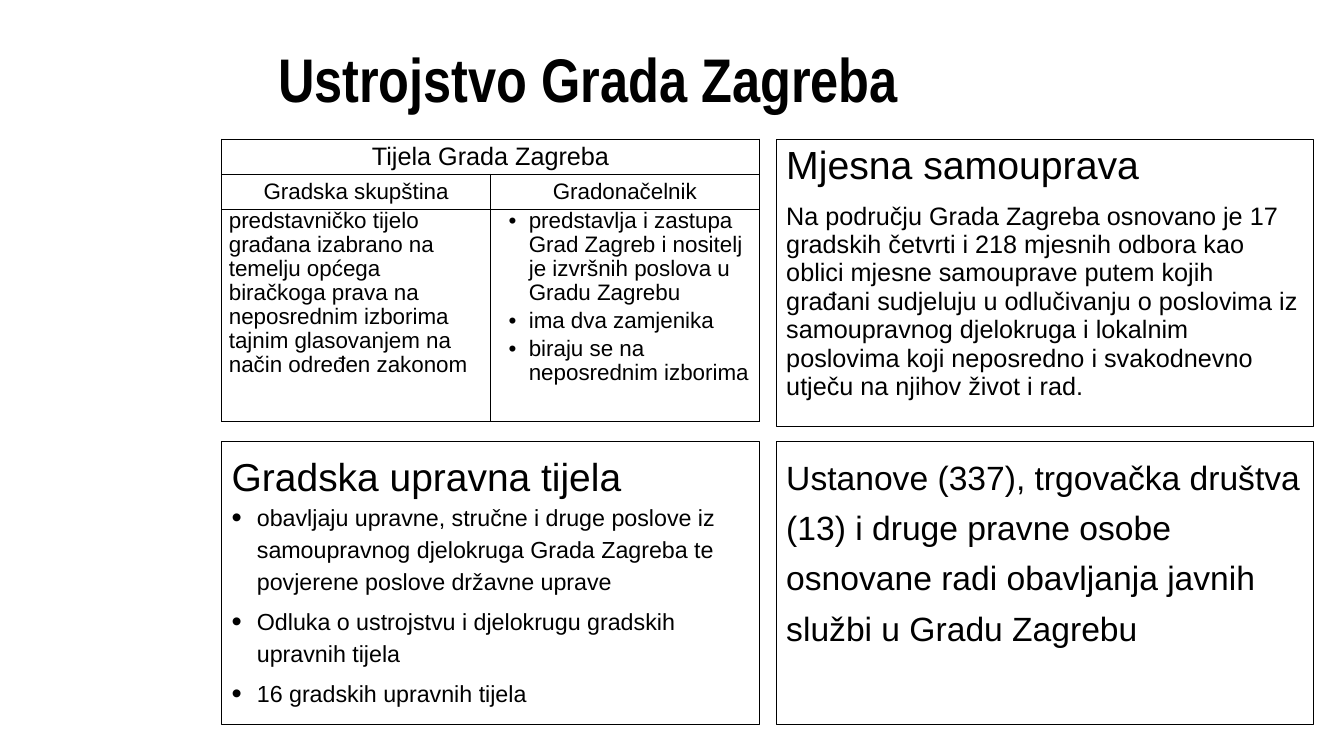
from pptx import Presentation
from pptx.dml.color import RGBColor
from pptx.enum.shapes import MSO_SHAPE
from pptx.enum.text import MSO_ANCHOR, PP_ALIGN
from pptx.oxml import parse_xml
from pptx.oxml.ns import nsdecls
from pptx.util import Inches, Pt

TITLE = "Ustrojstvo Grada Zagreba"
BODIES = "Tijela Grada Zagreba"
ASSEMBLY = ("Gradska skupština", [
    "predstavničko tijelo građana izabrano na temelju općega biračkoga prava na "
    "neposrednim izborima tajnim glasovanjem na način određen zakonom"])
MAYOR = ("Gradonačelnik", [
    "predstavlja i zastupa Grad Zagreb i nositelj je izvršnih poslova u Gradu Zagrebu",
    "ima dva zamjenika",
    "biraju se na neposrednim izborima"])
LOCAL = ("Mjesna samouprava", [
    "Na području Grada Zagreba osnovano je 17 gradskih četvrti i 218 mjesnih odbora kao "
    "oblici mjesne samouprave putem kojih građani sudjeluju u odlučivanju o poslovima iz "
    "samoupravnog djelokruga i lokalnim poslovima koji neposredno i svakodnevno utječu na "
    "njihov život i rad."])
OFFICES = ("Gradska upravna tijela", [
    "obavljaju upravne, stručne i druge poslove iz samoupravnog djelokruga Grada Zagreba te "
    "povjerene poslove državne uprave",
    "Odluka o ustrojstvu i djelokrugu gradskih upravnih tijela",
    "16 gradskih upravnih tijela"])
INSTITUTIONS = ("Ustanove (337), trgovačka društva (13) i druge pravne osobe osnovane radi "
                "obavljanja javnih službi u Gradu Zagrebu")

THEME = {
    "ink": RGBColor(0, 0, 0), "font": "Arial", "title_font": "Arial Narrow",
    "title": 44, "head": 28, "office_head": 27.8, "lead": 24, "body": 18,
    "cell": 16, "office": 16.6, "frame": 0.75, "border": 1,
}

LEFT, TOP, PANEL_W, GAP = 2.2, 1.38, 5.33, 0.17
RIGHT = LEFT + PANEL_W + GAP
LOWER, UPPER_H, LOWER_H = 4.38, 2.85, 2.81
ROWS = [0.35, 0.35, 2.1]


def set_bullet(p, margin, hang, percent):
    pPr = p._p.get_or_add_pPr()
    pPr.set("marL", str(Inches(margin)))
    pPr.set("indent", str(-Inches(hang)))
    for xml in (f'<a:buSzPct {nsdecls("a")} val="{percent * 1000}"/>',
                f'<a:buFont {nsdecls("a")} typeface="Arial"/>',
                f'<a:buChar {nsdecls("a")} char="•"/>'):
        pPr.append(parse_xml(xml))


def write(tf, lines, size, bullet=None, font=None, bold=False, start=False, **form):
    for i, text in enumerate(lines):
        p = tf.paragraphs[0] if start and i == 0 else tf.add_paragraph()
        if bullet:
            set_bullet(p, *bullet)
        for name, value in form.items():
            setattr(p, name, value)
        r = p.add_run()
        r.text = text
        style = {"name": font or THEME["font"], "size": Pt(size), "bold": bold}
        for name, value in style.items():
            setattr(r.font, name, value)
        r.font.color.rgb = THEME["ink"]


def add_panel(s, x, y, h):
    sp = s.shapes.add_shape(MSO_SHAPE.RECTANGLE, Inches(x), Inches(y),
                            Inches(PANEL_W), Inches(h))
    sp.shadow.inherit = False
    sp.fill.background()
    sp.line.color.rgb = THEME["ink"]
    sp.line.width = Pt(THEME["frame"])
    tf = sp.text_frame
    tf.word_wrap = True
    tf.vertical_anchor = MSO_ANCHOR.TOP
    return tf


def style_cell(cell, left=0.07, right=0.07, anchor=MSO_ANCHOR.MIDDLE):
    form = {"margin_left": Inches(left), "margin_right": Inches(right),
            "margin_top": 0, "margin_bottom": 0, "vertical_anchor": anchor}
    for name, value in form.items():
        setattr(cell, name, value)
    cell.fill.background()
    tcPr = cell._tc.get_or_add_tcPr()
    for i, side in enumerate("LRTB"):
        tcPr.insert(i, parse_xml(
            f'<a:ln{side} {nsdecls("a")} w="{Pt(THEME["border"])}"><a:solidFill>'
            f'<a:srgbClr val="{THEME["ink"]}"/></a:solidFill></a:ln{side}>'))


def add_bodies_table(s):
    table = s.shapes.add_table(len(ROWS), 2, Inches(LEFT), Inches(TOP),
                               Inches(PANEL_W), Inches(sum(ROWS))).table
    table.first_row = table.horz_banding = False
    for row, h in zip(table.rows, ROWS):
        row.height = Inches(h)
    for col in range(2):
        for row in range(2):
            style_cell(table.cell(row, col))
    style_cell(table.cell(2, 0), anchor=MSO_ANCHOR.TOP)
    style_cell(table.cell(2, 1), 0, 0.04, MSO_ANCHOR.TOP)
    table.cell(0, 0).merge(table.cell(0, 1))
    write(table.cell(0, 0).text_frame, [BODIES], THEME["body"], start=True,
          alignment=PP_ALIGN.CENTER)
    forms = [{}, {"bullet": (0.38, 0.2, 100), "space_after": Pt(3)}]
    for col, ((head, lines), form) in enumerate(zip((ASSEMBLY, MAYOR), forms)):
        write(table.cell(1, col).text_frame, [head], THEME["cell"], start=True,
              alignment=PP_ALIGN.CENTER)
        write(table.cell(2, col).text_frame, lines, THEME["cell"], start=True,
              line_spacing=0.96, alignment=PP_ALIGN.LEFT, **form)


def main():
    prs = Presentation()
    prs.slide_width, prs.slide_height = Inches(13.33), Inches(7.5)
    s = prs.slides.add_slide(prs.slide_layouts[6])

    tf = s.shapes.add_textbox(Inches(2.66), Inches(0.09), Inches(9.76), Inches(1.45)).text_frame
    tf.word_wrap = True
    tf.vertical_anchor = MSO_ANCHOR.MIDDLE
    write(tf, [TITLE], THEME["title"], font=THEME["title_font"], bold=True, start=True,
          line_spacing=0.9)

    add_bodies_table(s)

    flow = {"alignment": PP_ALIGN.LEFT, "line_spacing": 0.94}
    tf = add_panel(s, RIGHT, TOP, UPPER_H)
    write(tf, [LOCAL[0]], THEME["head"], start=True, **flow)
    write(tf, LOCAL[1], THEME["body"], space_before=Pt(10), **flow)

    flow["line_spacing"] = 1.14
    tf = add_panel(s, LEFT, LOWER, LOWER_H)
    write(tf, [OFFICES[0]], THEME["office_head"], start=True, **flow)
    write(tf, OFFICES[1], THEME["office"], bullet=(0.25, 0.25, 125), space_after=Pt(6), **flow)

    flow["line_spacing"] = 1.25
    tf = add_panel(s, RIGHT, LOWER, LOWER_H)
    write(tf, [INSTITUTIONS], THEME["lead"], start=True, **flow)

    prs.save("out.pptx")


if __name__ == "__main__":
    main()
